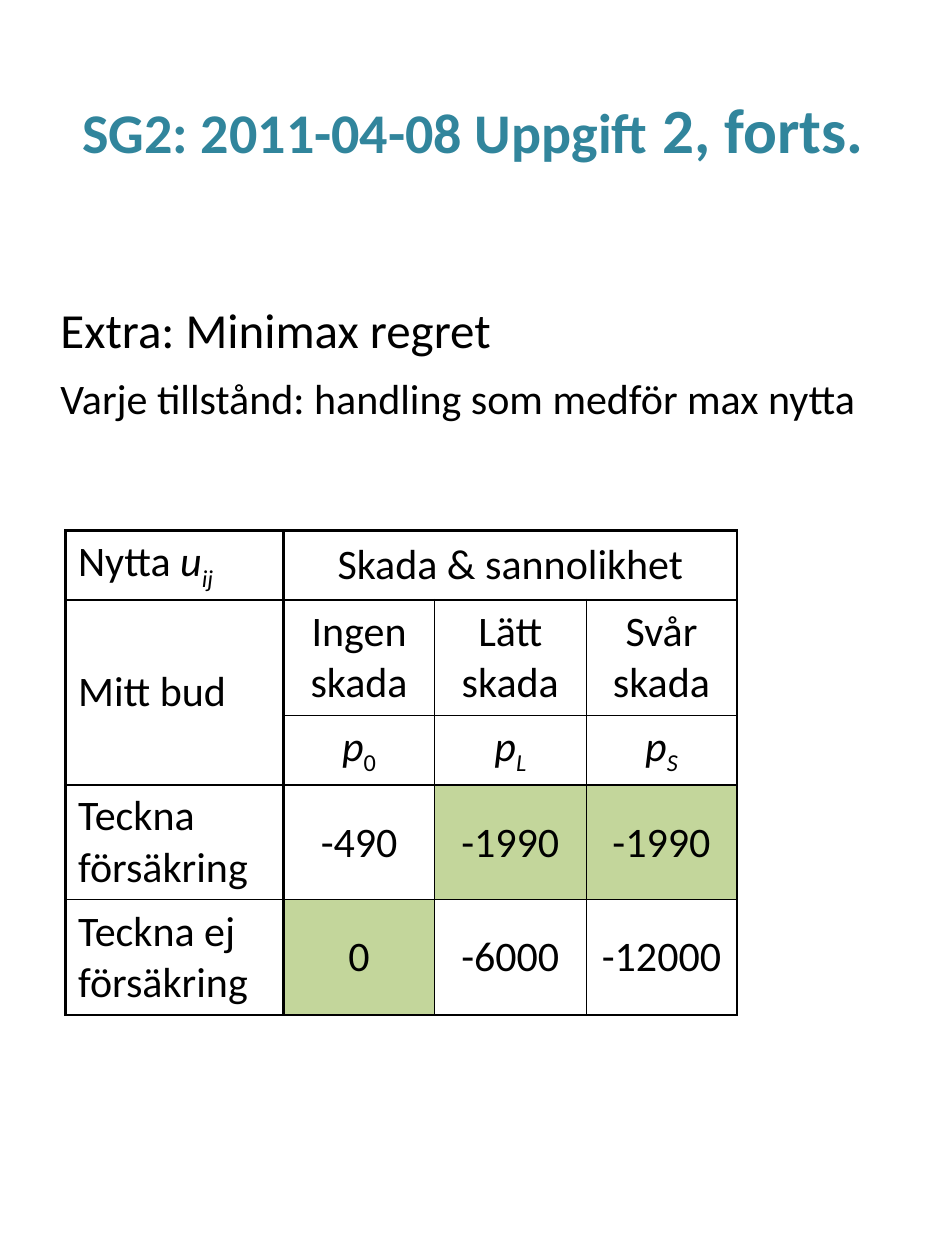
from lxml.etree import SubElement
from pptx import Presentation
from pptx.dml.color import RGBColor
from pptx.enum.text import MSO_ANCHOR, MSO_AUTO_SIZE, PP_ALIGN
from pptx.oxml.ns import qn
from pptx.util import Inches, Pt

NO_STYLE = "{2D5ABB26-0587-4C30-8999-92F81FD0307C}"
THICK_COLUMN_EDGES = {0, 1, 4}
THICK_ROW_EDGES = {0, 1, 3, 5}


def colour(value):
    return RGBColor.from_string(value)


class SlideBuilder:
    font = "Calibri"
    ink = "000000"
    accent = "31859C"
    best = "C3D69B"

    def __init__(self, slide):
        self.slide = slide

    def place(self, placeholder, left, top, width, height):
        placeholder.left, placeholder.top = Inches(left), Inches(top)
        placeholder.width, placeholder.height = Inches(width), Inches(height)
        frame = placeholder.text_frame
        frame.word_wrap = True
        frame.auto_size = MSO_AUTO_SIZE.NONE
        return frame

    def style(self, font, size, ink):
        font.name = self.font
        font.size = Pt(size)
        font.color.rgb = colour(ink)

    def title(self, parts, box):
        frame = self.place(self.slide.shapes.title, *box)
        frame.vertical_anchor = MSO_ANCHOR.MIDDLE
        heading = frame.paragraphs[0]
        heading.alignment = PP_ALIGN.CENTER
        for text, size in parts:
            run = heading.add_run()
            run.text = text
            self.style(run.font, size, self.accent)
            run.font.bold = True

    def body(self, lines, box):
        frame = self.place(self.slide.placeholders[1], *box)
        frame.text = "\n".join(text for text, _ in lines)
        for level, (paragraph, (_, size)) in enumerate(zip(frame.paragraphs, lines)):
            paragraph.level = level
            paragraph.space_before = Pt(7.6)
            self.style(paragraph.font, size, self.ink)
            properties = paragraph._p.get_or_add_pPr()
            properties.set("marL", "0")
            properties.set("indent", "0")
            properties.insert_element_before(
                properties.makeelement(qn("a:buNone")), "a:tabLst", "a:defRPr")

    def border(self, cell, side, thick):
        line = SubElement(cell._tc.get_or_add_tcPr(), qn(f"a:ln{side}"),
                          w=str(Pt(1.5 if thick else 0.5)))
        fill = SubElement(line, qn("a:solidFill"))
        SubElement(fill, qn("a:srgbClr"), val=self.ink)

    def outline(self, cell, row, column):
        right = column + (cell.span_width if cell.is_merge_origin else 1)
        bottom = row + (cell.span_height if cell.is_merge_origin else 1)
        edges = (("L", column in THICK_COLUMN_EDGES), ("R", right in THICK_COLUMN_EDGES),
                 ("T", row in THICK_ROW_EDGES), ("B", bottom in THICK_ROW_EDGES))
        for side, thick in edges:
            if thick or not cell.is_spanned:
                self.border(cell, side, thick)

    def label(self, cell, parts, centred):
        paragraph = cell.text_frame.paragraphs[0]
        paragraph.alignment = PP_ALIGN.CENTER if centred else PP_ALIGN.LEFT
        self.style(paragraph.font, 24, self.ink)
        for text, italic, subscript in parts:
            run = paragraph.add_run()
            run.text = text
            if italic:
                run.font.italic = True
            if subscript:
                run._r.get_or_add_rPr().set("baseline", "-25000")

    def table(self, rows, widths, heights, merges, highlights, left, top):
        grid = self.slide.shapes.add_table(
            len(heights), len(widths), Inches(left), Inches(top),
            Inches(sum(widths)), Inches(sum(heights))).table
        grid.first_row = grid.horz_banding = False
        grid._tbl.tblPr.find(qn("a:tableStyleId")).text = NO_STYLE
        for column, width in zip(grid.columns, widths):
            column.width = Inches(width)
        for row, height in zip(grid.rows, heights):
            row.height = Inches(height)
        for start, end in merges:
            grid.cell(*start).merge(grid.cell(*end))
        for r in range(len(heights)):
            for c in range(len(widths)):
                cell = grid.cell(r, c)
                if c < max(THICK_COLUMN_EDGES):
                    self.outline(cell, r, c)
                if (r, c) in highlights:
                    cell.fill.solid()
                    cell.fill.fore_color.rgb = colour(self.best)
                else:
                    cell.fill.background()
                cell.vertical_anchor = MSO_ANCHOR.MIDDLE
                if r == 3 and 1 <= c <= 3:
                    cell.margin_left = cell.margin_right = cell.margin_top = Inches(0.01)
                    cell.margin_bottom = 0
                if (r, c) in rows:
                    self.label(cell, rows[r, c], c > 0)


def plain(text):
    return [(text, False, False)]


def probability(index, italic):
    return [("p", True, False), (index, italic, True)]


def main():
    presentation = Presentation()
    presentation.slide_width, presentation.slide_height = Inches(7.5), Inches(10)
    builder = SlideBuilder(presentation.slides.add_slide(presentation.slide_layouts[1]))
    builder.title([("SG2: 2011-04-08 Uppgift", 32), (" 2, forts.", 36)],
                  (0.38, 0.4, 6.75, 1.24))
    builder.body([("Extra: Minimax regret", 28),
                  ("Varje tillstånd: handling som medför max nytta", 24)],
                 (0.38, 2.33, 6.92, 7.16))
    utilities = [
        [[("Nytta ", False, False), ("u", True, False), ("ij", True, True)],
         plain("Skada & sannolikhet")],
        [plain(text) for text in ("Mitt bud", "Ingen skada", "Lätt skada", "Svår skada")],
        [[], probability("0", False), probability("L", True), probability("S", True)],
        [plain(text) for text in ("Teckna försäkring", "-490", "-1990", "-1990")],
        [plain(text) for text in ("Teckna ej försäkring", "0", "-6000", "-12000")],
    ]
    cells = {(r, c): parts for r, row in enumerate(utilities)
             for c, parts in enumerate(row) if parts}
    builder.table(cells, [1.73] + [1.2] * 4, [0.55, 0.91, 0.55, 0.91, 0.91],
                  [((0, 1), (0, 3)), ((1, 0), (2, 0)), ((1, 4), (2, 4))],
                  {(3, 2), (3, 3), (4, 1)}, 0.52, 4.21)
    presentation.save("out.pptx")


if __name__ == "__main__":
    main()
